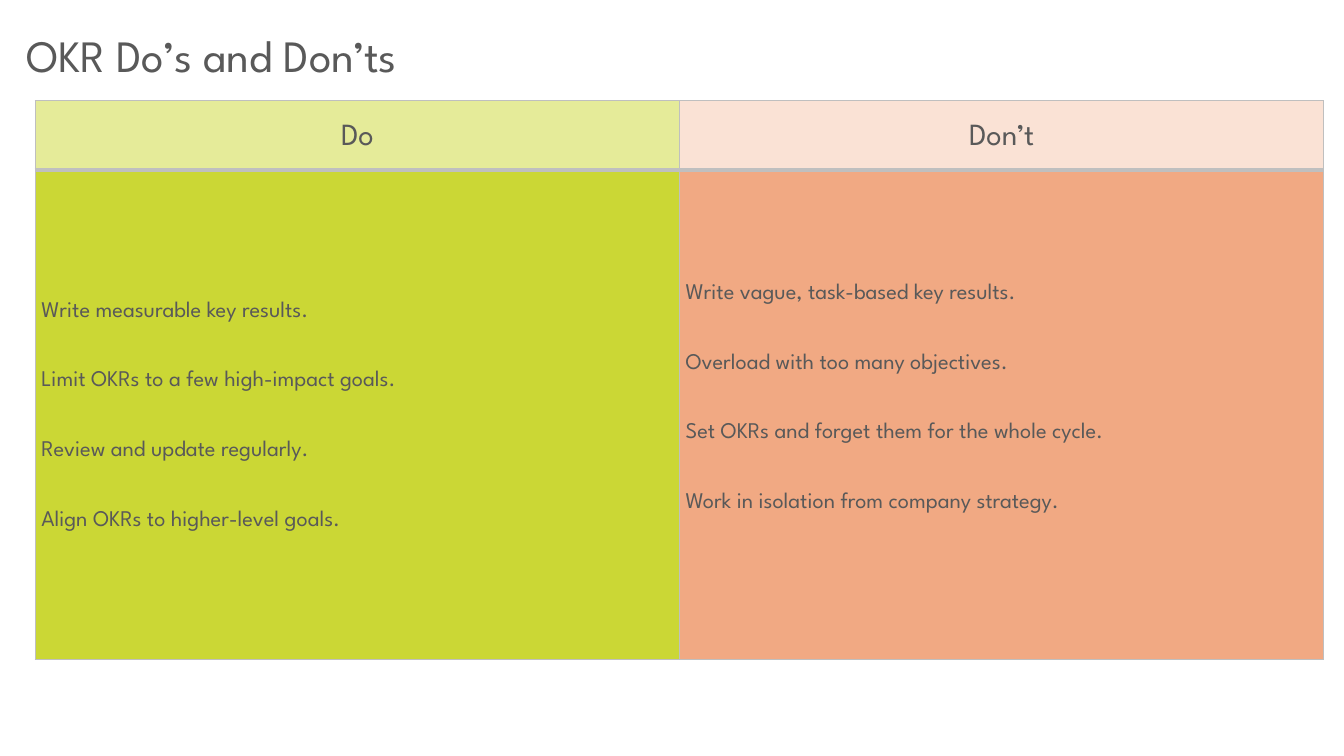
"""Build a slide with a two-column table of OKR do's and don'ts."""
import pptx
import pptx.util
import pptx.dml.color
import pptx.enum.text
import pptx.oxml
import pptx.oxml.ns

RGB = pptx.dml.color.RGBColor
ALIGN = pptx.enum.text.PP_ALIGN
ANCHOR = pptx.enum.text.MSO_ANCHOR
Pt = pptx.util.Pt

FONT = "League Spartan"
GREY = RGB(0x59, 0x59, 0x59)
RULE = RGB(0xBF, 0xBF, 0xBF)
LIME = RGB(0xCB, 0xD7, 0x35)
PALE_LIME = RGB(0xE5, 0xEB, 0x99)
CORAL = RGB(0xF1, 0xA9, 0x83)
PALE_CORAL = RGB(0xFA, 0xE2, 0xD5)

HEAD = {"alignment": ALIGN.CENTER, "line_spacing": 1.15, "space_after": Pt(8)}
BODY = {"alignment": ALIGN.LEFT, "line_spacing": 1.15, "space_after": Pt(33)}

COLUMNS = [
    ("Do", PALE_LIME, LIME, 0, [
        "Write measurable key results.",
        "Limit OKRs to a few high-impact goals.",
        "Review and update regularly.",
        "Align OKRs to higher-level goals.",
    ]),
    ("Don’t", PALE_CORAL, CORAL, 35, [
        "Write vague, task-based key results.",
        "Overload with too many objectives.",
        "Set OKRs and forget them for the whole cycle.",
        "Work in isolation from company strategy.",
    ]),
]


def px(n):
    return pptx.util.Inches(n / 100)


def apply(item, form):
    for name, value in form.items():
        setattr(item, name, value)


def write(frame, lines, size, form):
    frame.text = "\n".join(lines)
    for para in frame.paragraphs:
        apply(para, form)
        for run in para.runs:
            apply(run.font, {"name": FONT, "size": Pt(size), "bold": False})
            run.font.color.rgb = GREY


def edge(cell, widths):
    props = cell._tc.get_or_add_tcPr()
    for side, width in widths.items():
        props.append(pptx.oxml.parse_xml(
            f'<a:ln{side} {pptx.oxml.ns.nsdecls("a")} w="{Pt(width)}">'
            f'<a:solidFill><a:srgbClr val="{RULE}"/></a:solidFill></a:ln{side}>'))


def fill_cell(cell, lines, size, form, color, widths, bottom=0):
    apply(cell, {
        "margin_left": px(6), "margin_right": px(6), "margin_top": 0,
        "margin_bottom": px(bottom), "vertical_anchor": ANCHOR.MIDDLE,
    })
    write(cell.text_frame, lines, size, form)
    edge(cell, widths)
    cell.fill.solid()
    cell.fill.fore_color.rgb = color


def add_title(slide, text):
    title = slide.shapes.title
    apply(title, {"left": px(16), "top": px(21),
                  "width": px(1317), "height": px(64)})
    frame = title.text_frame
    write(frame, [text], 32, {"alignment": ALIGN.LEFT})
    apply(frame, {"vertical_anchor": ANCHOR.BOTTOM, "margin_bottom": px(4),
                  "auto_size": pptx.enum.text.MSO_AUTO_SIZE.NONE})


def add_grid(slide):
    table = slide.shapes.add_table(
        2, 2, px(35), px(100), px(1278), px(555)).table
    apply(table, {"first_row": False, "horz_banding": False})
    for row, height in zip(table.rows, (69, 485)):
        row.height = px(height)
    for col, (head, pale, deep, bottom, lines) in enumerate(COLUMNS):
        table.columns[col].width = px(639)
        fill_cell(table.cell(0, col), [head], 22, HEAD, pale,
                  {"L": 1, "R": 1, "T": 1, "B": 3})
        fill_cell(table.cell(1, col), lines, 16, BODY, deep,
                  {"L": 1, "R": 1, "T": 3, "B": 1}, bottom)


def main():
    deck = pptx.Presentation()
    apply(deck, {"slide_width": px(1333), "slide_height": px(750)})
    slide = deck.slides.add_slide(deck.slide_layouts[5])
    add_title(slide, "OKR Do’s and Don’ts")
    add_grid(slide)
    deck.save("out.pptx")


if __name__ == "__main__":
    main()
